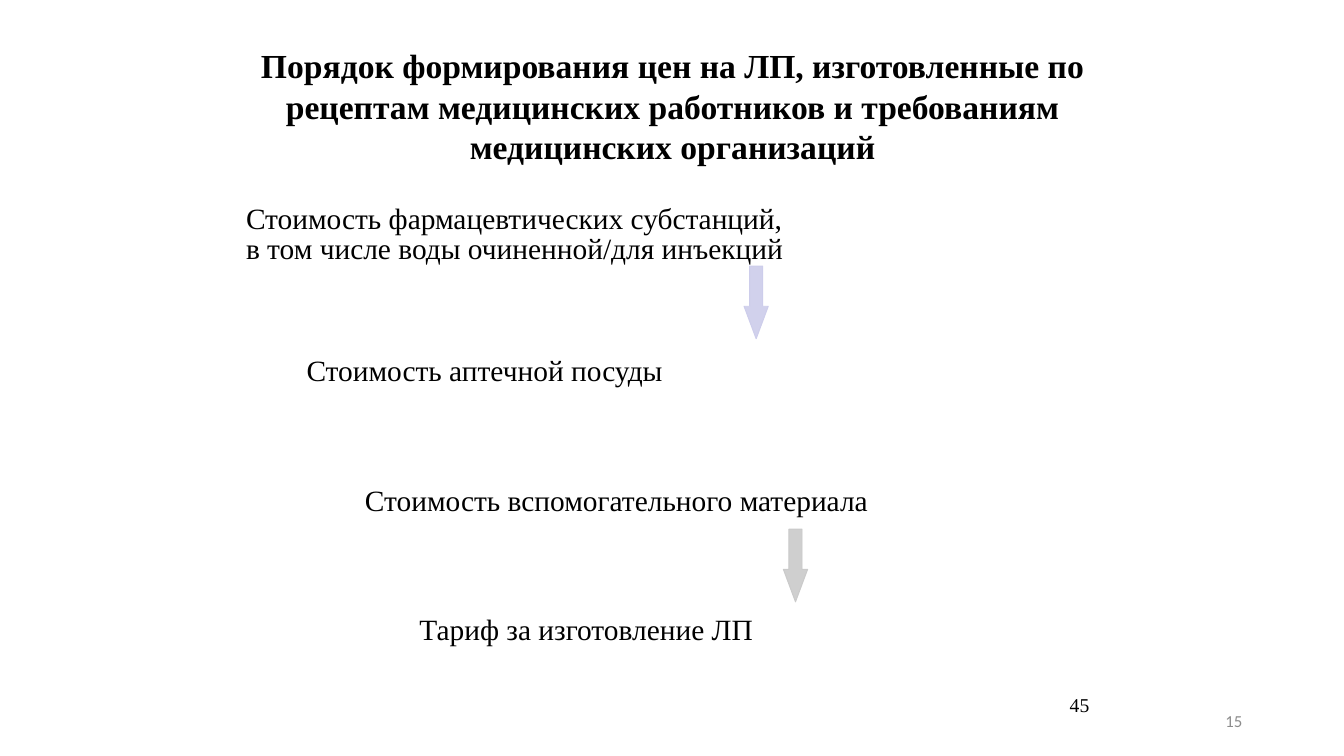
import pptx
import pptx.util
import pptx.dml.color
import pptx.enum.shapes
import pptx.enum.text
from dataclasses import dataclass
from lxml import etree
from pptx.util import Inches, Pt

ALIGN = pptx.enum.text.PP_ALIGN
ANCHOR = pptx.enum.text.MSO_ANCHOR


@dataclass(frozen=True)
class Theme:
    font: str = "Times New Roman"
    plain: str = "Calibri"
    ink: str = "000000"
    grey: str = "8C8C8C"
    lilac: str = "CDCDEB"
    silver: str = "CACACA"
    head: float = 24
    step: float = 21
    mark: float = 14
    foot: float = 12


class Page:
    def __init__(self, slide, theme):
        self.slide = slide
        self.theme = theme

    def place(self, shape, box):
        shape.left, shape.top, shape.width, shape.height = map(Inches, box)

    def frame(self, shape, top=0.01, side=0, anchor=ANCHOR.TOP):
        frame = shape.text_frame
        frame.word_wrap = True
        frame.auto_size = pptx.enum.text.MSO_AUTO_SIZE.NONE
        frame.margin_left = frame.margin_right = Inches(side)
        frame.margin_top, frame.margin_bottom = Inches(top), 0
        frame.vertical_anchor = anchor
        return frame

    def style(self, para, size, font=None, color=None, bold=False, align=ALIGN.LEFT):
        para.alignment = align
        for run in para.runs:
            run.font.size = Pt(size)
            run.font.name = font or self.theme.font
            run.font.bold = bold
            run.font.color.rgb = pptx.dml.color.RGBColor.from_string(color or self.theme.ink)

    def title(self, text, box):
        shape = self.slide.shapes.title
        self.place(shape, box)
        frame = self.frame(shape, anchor=ANCHOR.MIDDLE)
        frame.text = text
        self.style(frame.paragraphs[0], self.theme.head, bold=True, align=ALIGN.CENTER)

    def list(self, items, box, shift, gap):
        """Fill the body with unbulleted items, each shifted further right."""
        shape = self.slide.placeholders[1]
        self.place(shape, box)
        frame = self.frame(shape, top=0.06)
        frame.text = "\n".join(items)
        for i, para in enumerate(frame.paragraphs):
            self.style(para, self.theme.step)
            para.space_before = Pt(gap if i else 4.6)
            props = para._p.get_or_add_pPr()
            props.set("marL", str(Inches(shift * i)))
            props.set("indent", "0")
            etree.SubElement(props, pptx.oxml.ns.qn("a:buNone"))
        frame.paragraphs[0].line_spacing = Pt(21.7)

    def text(self, text, box, size, side=0, anchor=ANCHOR.TOP, **look):
        shape = self.slide.shapes.add_textbox(*map(Inches, box))
        frame = self.frame(shape, side=side, anchor=anchor)
        frame.text = text
        self.style(frame.paragraphs[0], size, **look)

    def arrow(self, left, top, color):
        kind = pptx.enum.shapes.MSO_SHAPE.DOWN_ARROW
        shape = self.slide.shapes.add_shape(kind, *map(Inches, (left, top, 0.24, 0.72)))
        shape.adjustments[0], shape.adjustments[1] = 0.54, 1.34
        shape.shadow.inherit = False
        tint = pptx.dml.color.RGBColor.from_string(color)
        shape.fill.solid()
        shape.fill.fore_color.rgb = tint
        fill = shape.fill._xPr.find(pptx.oxml.ns.qn("a:solidFill"))
        etree.SubElement(fill[0], pptx.oxml.ns.qn("a:alpha"), val="90000")
        shape.line.color.rgb = tint
        shape.line.width = Pt(0.72)


def main():
    deck = pptx.Presentation()
    deck.slide_width, deck.slide_height = Inches(13.33), Inches(7.5)
    theme = Theme()
    page = Page(deck.slides.add_slide(deck.slide_layouts[1]), theme)

    page.title("Порядок формирования цен на ЛП, изготовленные по рецептам "
               "медицинских работников и требованиям медицинских организаций",
               (2.55, 0.43, 8.24, 1.23))
    page.text("45", (10.61, 6.86, 0.23, 0.25), theme.mark)
    page.list(["Стоимость фармацевтических субстанций, "
               "в том числе воды очиненной/для инъекций",
               "Стоимость аптечной посуды"],
              (2.44, 1.97, 5.35, 1.88), shift=0.6, gap=61.6)
    page.text("Стоимость вспомогательного материала", (3.62, 4.77, 5.02, 0.38), theme.step)
    page.text("Тариф за изготовление ЛП", (4.16, 6.05, 3.34, 0.38), theme.step)
    page.arrow(7.38, 2.64, theme.lilac)
    page.arrow(7.77, 5.25, theme.silver)
    page.text("15", (9.42, 6.95, 3, 0.4), theme.foot, side=0.1, anchor=ANCHOR.MIDDLE,
              font=theme.plain, color=theme.grey, align=ALIGN.RIGHT)
    deck.save("out.pptx")


if __name__ == "__main__":
    main()
